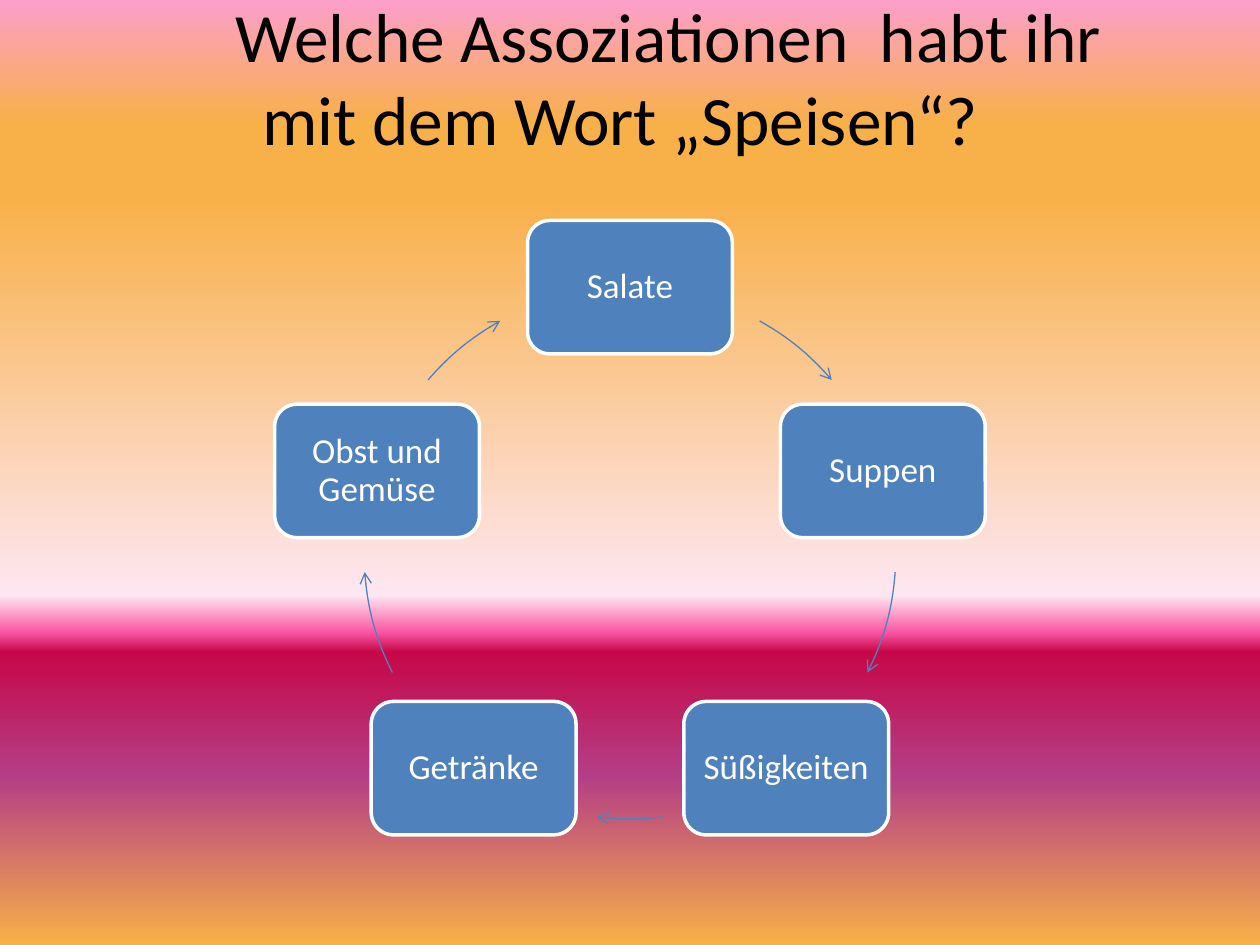
from dataclasses import dataclass
from math import cos, radians, sin

from lxml import etree
from pptx import Presentation
from pptx import util as u
from pptx.dml.color import RGBColor
from pptx.enum import shapes, text
from pptx.oxml import ns


@dataclass(frozen=True)
class Theme:
    """Colours, font and type sizes of the slide."""
    font: str = "Calibri"
    title_size: float = 39.6
    dish_size: float = 20
    ink: str = "000000"
    light: str = "FFFFFF"
    accent: str = "4F81BD"
    sky: tuple = ((0, "FC9FCB"), (13, "F8B049"), (21, "F8B049"), (63, "FEE7F2"),
                  (67, "F952A0"), (69, "C50849"), (82, "B43E85"), (100, "F8B049"))


THEME = Theme()
CENTRE_X, CENTRE_Y, RADIUS = 12.7, 11.15, 5.36
DISH_WIDTH, DISH_HEIGHT = 4.13, 2.69
TITLE_LINES = (("Welche Assoziationen  habt ihr", 1.55, 0),
               ("mit dem Wort „Speisen“?", 0, 0.38))
DISHES = ("Salate", "Suppen", "Süßigkeiten", "Getränke", "Obst und Gemüse")
RIGHT_ARCS = ((29.2, 49.4), (94.1, 116.7))
BOTTOM_ARC = (172.9, 187.1)


def rgb(code):
    """Turn a hex code into a colour."""
    return RGBColor.from_string(code)


def paint_background(slide):
    """Fill the background with the vertical gradient."""
    fill = slide.background.fill
    fill.gradient()
    fill.gradient_angle = 270
    stops = slide.element.find(".//" + ns.qn("a:gsLst"))
    for stop in list(stops):
        stops.remove(stop)
    for percent, code in THEME.sky:
        stop = etree.SubElement(stops, ns.qn("a:gs"), pos=str(percent * 1000))
        etree.SubElement(stop, ns.qn("a:srgbClr"), val=code)


def add_run(paragraph, words, size, code):
    """Add one centred run in the theme font."""
    paragraph.alignment = text.PP_ALIGN.CENTER
    run = paragraph.add_run()
    run.text = words
    run.font.name = THEME.font
    run.font.size = u.Pt(size)
    run.font.color.rgb = rgb(code)


def add_title(slide):
    """Add the question, each line shifted by its own margins."""
    question = slide.shapes.add_textbox(u.Cm(1.27), u.Cm(0.76), u.Cm(22.86), u.Cm(3.18))
    frame = question.text_frame
    frame.word_wrap = True
    frame.vertical_anchor = text.MSO_ANCHOR.BOTTOM
    frame.margin_bottom = u.Cm(0.72)
    for index, (words, left, right) in enumerate(TITLE_LINES):
        line = frame.add_paragraph() if index else frame.paragraphs[0]
        add_run(line, words, THEME.title_size, THEME.ink)
        margins = line._p.get_or_add_pPr()
        margins.set("marL", str(u.Cm(left)))
        margins.set("marR", str(u.Cm(right)))


def add_dish(slide, words, angle):
    """Add a rounded box on the circle, clockwise from the top."""
    x = CENTRE_X + RADIUS * sin(radians(angle))
    y = CENTRE_Y - RADIUS * cos(radians(angle))
    dish = slide.shapes.add_shape(
        shapes.MSO_SHAPE.ROUNDED_RECTANGLE,
        u.Cm(x - DISH_WIDTH / 2), u.Cm(y - DISH_HEIGHT / 2),
        u.Cm(DISH_WIDTH), u.Cm(DISH_HEIGHT))
    dish.shadow.inherit = False
    dish.fill.solid()
    dish.fill.fore_color.rgb = rgb(THEME.accent)
    dish.line.color.rgb = rgb(THEME.light)
    dish.line.width = u.Pt(2)
    frame = dish.text_frame
    frame.word_wrap = True
    frame.vertical_anchor = text.MSO_ANCHOR.MIDDLE
    frame.margin_left = frame.margin_right = u.Cm(0.2)
    frame.margin_top = frame.margin_bottom = u.Cm(0.2)
    label = frame.paragraphs[0]
    label.line_spacing = 0.9
    add_run(label, words, THEME.dish_size, THEME.light)


def add_arc_arrow(slide, start, end):
    """Add an arc of the circle with an open arrowhead at its end."""
    arc = slide.shapes.add_shape(
        shapes.MSO_SHAPE.ARC, u.Cm(CENTRE_X - RADIUS), u.Cm(CENTRE_Y - RADIUS),
        u.Cm(2 * RADIUS), u.Cm(2 * RADIUS))
    for index, angle in enumerate((start, end)):
        arc.adjustments[index] = (angle - 90) % 360 * 0.6
    arc.shadow.inherit = False
    arc.fill.background()
    arc.line.color.rgb = rgb(THEME.accent)
    arc.line.width = u.Pt(0.75)
    outline = arc.element.spPr.find(ns.qn("a:ln"))
    etree.SubElement(outline, ns.qn("a:tailEnd"), type="arrow")


def main():
    """Build and save the slide."""
    deck = Presentation()
    deck.slide_width, deck.slide_height = u.Cm(25.4), u.Cm(19.05)
    slide = deck.slides.add_slide(deck.slide_layouts[6])
    paint_background(slide)
    add_title(slide)
    left_arcs = [(360 - end, 360 - start) for start, end in reversed(RIGHT_ARCS)]
    arcs = [*RIGHT_ARCS, BOTTOM_ARC, *left_arcs]
    for index, (words, arc) in enumerate(zip(DISHES, arcs)):
        add_dish(slide, words, index * 360 / len(DISHES))
        add_arc_arrow(slide, *arc)
    deck.save("out.pptx")


if __name__ == "__main__":
    main()
